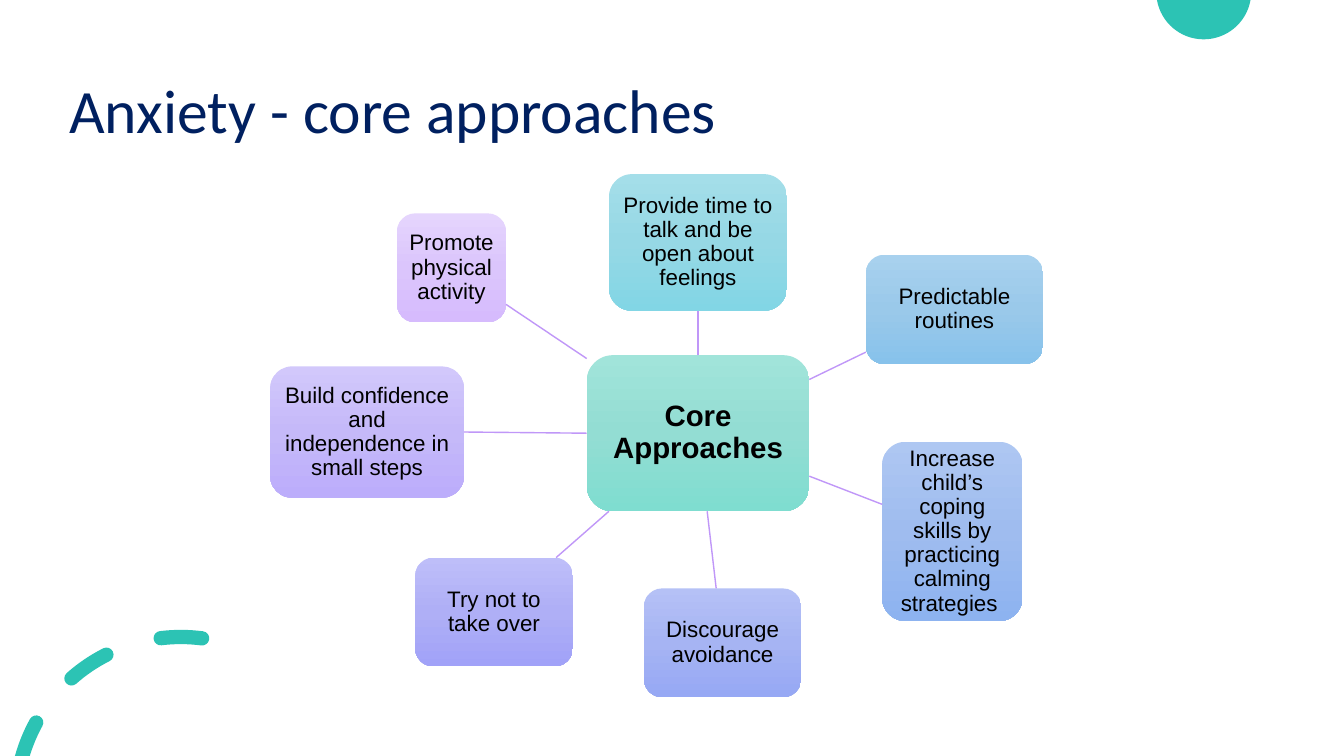
"""Build the anxiety slide: a hub of core approaches with seven spokes."""
import copy
import math

import pptx
import pptx.dml.color
import pptx.enum.shapes
import pptx.enum.text
import pptx.oxml
import pptx.oxml.ns
import pptx.util

Pt = pptx.util.Pt
qn = pptx.oxml.ns.qn
ALIGN = pptx.enum.text.PP_ALIGN
MIDDLE = pptx.enum.text.MSO_ANCHOR.MIDDLE
ROUND = pptx.enum.shapes.MSO_SHAPE.ROUNDED_RECTANGLE
STRAIGHT = pptx.enum.shapes.MSO_CONNECTOR.STRAIGHT
WIDE, HIGH = 960, 540


def color(code):
    return pptx.dml.color.RGBColor.from_string(code)


def blank(kind):
    return pptx.oxml.parse_xml(
        "<a:%s %s/>" % (kind, pptx.oxml.ns.nsdecls("a")))


def write(shape, text, size=16, font="Arial", ink="000000", bold=False,
          align=ALIGN.CENTER, inset=3.2):
    frame = shape.text_frame
    frame.word_wrap = True
    frame.vertical_anchor = MIDDLE
    frame.margin_left = frame.margin_right = Pt(inset)
    frame.margin_top = frame.margin_bottom = Pt(inset)
    para = frame.paragraphs[0]
    para.alignment = align
    para.line_spacing = 0.9
    run = para.add_run()
    run.text = text
    run.font.size = Pt(size)
    run.font.name = font
    run.font.bold = bold
    run.font.color.rgb = color(ink)


def center(box):
    left, top, width, height = box
    return left + width / 2, top + height / 2


def edge(box, goal):
    x, y = center(box)
    dx, dy = goal[0] - x, goal[1] - y
    part = 1 / max(2 * abs(dx) / box[2], 2 * abs(dy) / box[3])
    return x + dx * part, y + dy * part


def polar(mid, radius, turn, lean=0):
    s, c = math.sin(math.radians(turn)), math.cos(math.radians(turn))
    return (mid[0] + radius * (s + lean * c), mid[1] - radius * (c - lean * s))


def arc(mid, radius, start, stop, parts=1):
    step = (stop - start) / parts
    lean = 4 / 3 * math.tan(math.radians(step / 4))
    dots = []
    for i in range(parts):
        turn = start + i * step
        dots += [polar(mid, radius, turn, lean),
                 polar(mid, radius, turn + step, -lean),
                 polar(mid, radius, turn + step)]
    return dots


def dash(start, stop):
    outer, inner = RING + HALF, RING - HALF
    first, last = polar(HEART, RING, start), polar(HEART, RING, stop)
    return ([polar(HEART, outer, start)] + arc(HEART, outer, start, stop)
            + arc(last, HALF, stop, stop + 180, 2)
            + arc(HEART, inner, stop, start)
            + arc(first, HALF, start + 180, start + 360, 2))


def stub(stop):
    outer, inner = RING + HALF, RING - HALF
    low, high = [-math.degrees(math.acos((HEART[1] - HIGH) / r))
                 for r in (outer, inner)]
    return ([polar(HEART, outer, low)] + arc(HEART, outer, low, stop)
            + arc(polar(HEART, RING, stop), HALF, stop, stop + 180, 2)
            + arc(HEART, inner, stop, high))


def disc(mid, radius):
    turn = 180 - math.degrees(math.acos(-mid[1] / radius))
    turn = 180 - turn if turn < 90 else turn
    return [polar(mid, radius, turn)] + arc(mid, radius, turn, 360 - turn, 2)


class Board:
    """Hold the style and the current slide."""

    teal, navy, link = "2CC3B4", "002060", "C097F8"

    def __init__(self, deck):
        self.slide = deck.slides.add_slide(deck.slide_layouts[6])
        self.shapes = self.slide.shapes

    def title(self, text, box):
        shape = self.shapes.add_textbox(*map(Pt, box))
        write(shape, text, size=44, font="Calibri", ink=self.navy,
              align=ALIGN.LEFT, inset=7.2)

    def accent(self, *rings):
        build = None
        for ring in rings:
            dots = [(Pt(x), Pt(y)) for x, y in ring]
            if build is None:
                build = self.shapes.build_freeform(*dots[0])
            else:
                build.move_to(*dots[0])
            build.add_line_segments(dots[1:], close=True)
        shape = build.convert_to_shape()
        legs = list(shape._element.iter(qn("a:lnTo")))
        for i in range(0, len(legs), 3):
            curve = blank("cubicBezTo")
            legs[i].addprevious(curve)
            for leg in legs[i:i + 3]:
                curve.append(leg[0])
                leg.getparent().remove(leg)
        shape.shadow.inherit = False
        shape.fill.solid()
        shape.fill.fore_color.rgb = color(self.teal)
        shape.line.fill.background()

    def bubble(self, text, box, tones, **style):
        shape = self.shapes.add_shape(ROUND, *map(Pt, box))
        shape.shadow.inherit = False
        shape.line.fill.background()
        shape.fill.gradient()
        shape.fill.gradient_angle = 270
        stops = shape._element.spPr.find(".//" + qn("a:gsLst"))
        stops.insert(1, copy.deepcopy(stops[0]))
        for i, stop in enumerate(shape.fill.gradient_stops):
            stop.position = i / 2
            stop.color.rgb = color(tones[i])
        write(shape, text, **style)
        return shape

    def spoke(self, hub, hub_box, leaf, leaf_box, sides):
        ends = edge(hub_box, center(leaf_box)) + edge(leaf_box, center(hub_box))
        line = self.shapes.add_connector(STRAIGHT, *map(Pt, ends))
        line.line.color.rgb = color(self.link)
        line.line.width = Pt(1)
        line._element.spPr.append(blank("effectLst"))
        if sides:
            line.begin_connect(hub, sides[0])
            line.end_connect(leaf, sides[1])


HEART, RING, HALF = (129.2, 572.9), 117.9, 5.1
CORE = (419.1, 253.7, 159, 111.5)
LEAVES = [
    ("Provide time to talk and be open about feelings",
     (435.1, 124.4, 127, 97.5), ("A4DEE9", "96D8E5", "82D6E5"), (0, 2)),
    ("Predictable routines",
     (618.5, 182, 126.5, 78), ("A8D1EE", "9AC9EA", "87C2EB"), None),
    ("Increase child’s coping skills by practicing calming strategies ",
     (630.1, 315.6, 100.3, 128), ("AEC7F2", "9FBCEF", "8DB3F0"), None),
    ("Discourage avoidance",
     (460, 420.3, 112.3, 77.7), ("B5C1F6", "A6B4F3", "96A8F4"), None),
    ("Try not to take over",
     (296.6, 398.3, 112.6, 77.7), ("BEBEF9", "AFAFF6", "A1A2F8"), None),
    ("Build confidence and independence in small steps",
     (193, 261.7, 138.5, 93.8), ("D2C8FB", "C5B9F9", "BCADFB"), (1, 3)),
    ("Promote physical activity",
     (283.6, 152.4, 77.8, 77.8), ("E5D5FD", "DBC5FC", "D6BBFD"), None),
]


def main():
    deck = pptx.Presentation()
    deck.slide_width, deck.slide_height = Pt(WIDE), Pt(HIGH)
    board = Board(deck)
    board.accent(disc((859.8, -5.8), 33.9))
    board.accent(stub(-61.2), dash(-41.5, -26.8), dash(-7, 7.4))
    board.title("Anxiety - core approaches", (42.5, 28.8, 828, 104.4))
    hub = board.bubble("Core Approaches", CORE, ("A1E4DA", "93DDD3", "7FDDD0"),
                       size=21, bold=True, inset=4.2)
    for text, box, tones, sides in LEAVES:
        leaf = board.bubble(text, box, tones)
        board.spoke(hub, CORE, leaf, box, sides)
    deck.save("out.pptx")


if __name__ == "__main__":
    main()
